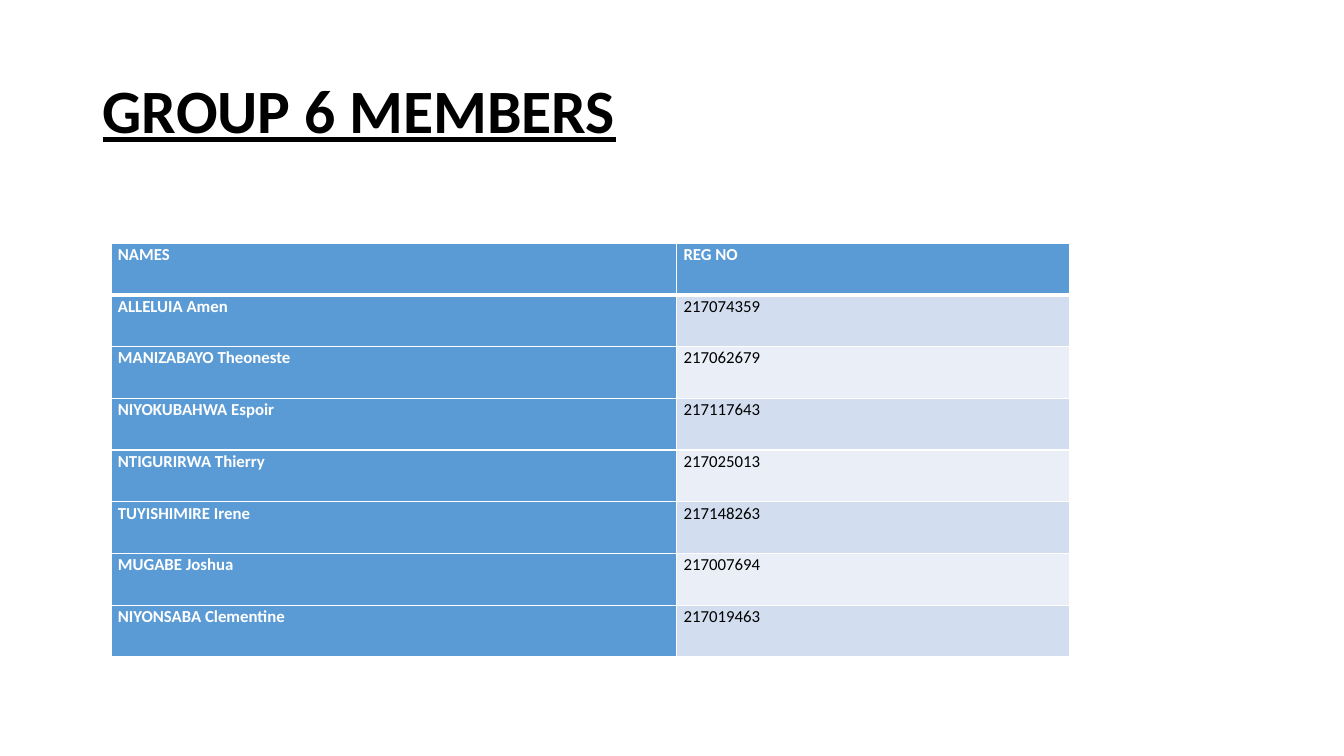
from lxml import etree
from pptx import Presentation
from pptx.dml.color import RGBColor
from pptx.enum.text import MSO_ANCHOR
from pptx.oxml.ns import qn
from pptx.util import Inches, Pt

COLORS = {
    "text": "000000",
    "white": "FFFFFF",
    "blue": "5B9BD5",
    "band_dark": "D2DEEF",
    "band_light": "EAEFF7",
}

MEMBERS = [
    ("NAMES", "REG NO"),
    ("ALLELUIA Amen", "217074359"),
    ("MANIZABAYO Theoneste", "217062679"),
    ("NIYOKUBAHWA Espoir", "217117643"),
    ("NTIGURIRWA Thierry", "217025013"),
    ("TUYISHIMIRE Irene", "217148263"),
    ("MUGABE Joshua", "217007694"),
    ("NIYONSABA Clementine", "217019463"),
]


def rgb(name):
    return RGBColor.from_string(COLORS[name])


class SlideBuilder:
    font = "Calibri"

    def __init__(self, s):
        self.s = s

    def run(self, p, text, size, color, bold=False, underline=False):
        r = p.add_run()
        r.text = text
        r.font.name = self.font
        r.font.size = Pt(size)
        r.font.bold = bold
        r.font.underline = underline
        r.font.color.rgb = rgb(color)

    def title(self, text, x, y, w, h):
        sp = self.s.shapes.add_textbox(Inches(x), Inches(y), Inches(w), Inches(h))
        tf = sp.text_frame
        tf.word_wrap = True
        tf.vertical_anchor = MSO_ANCHOR.MIDDLE
        p = tf.paragraphs[0]
        p.line_spacing = 0.9
        self.run(p, text, 44, "text", bold=True, underline=True)

    def border(self, cell, side, width):
        tc_pr = cell._tc.get_or_add_tcPr()
        ln = etree.SubElement(tc_pr, qn(f"a:ln{side}"), w=str(Pt(width)))
        fill = etree.SubElement(ln, qn("a:solidFill"))
        etree.SubElement(fill, qn("a:srgbClr"), val=COLORS["white"])

    def cell(self, cell, text, fill, color, bold, top, bottom):
        cell.margin_left = cell.margin_right = Inches(0.07)
        cell.margin_top = cell.margin_bottom = 0
        # Borders come before the fill in the cell properties
        for side, width in (("L", 1), ("R", 1), ("T", top), ("B", bottom)):
            self.border(cell, side, width)
        cell.fill.solid()
        cell.fill.fore_color.rgb = rgb(fill)
        p = cell.text_frame.paragraphs[0]
        p.line_spacing = 1.07
        self.run(p, text, 12, color, bold)

    def table(self, rows, x, y, col_widths, h):
        frame = self.s.shapes.add_table(
            len(rows), len(col_widths), Inches(x), Inches(y),
            Inches(sum(col_widths)), Inches(h))
        table = frame.table
        for col, width in zip(table.columns, col_widths):
            col.width = Inches(width)
        for i, row in enumerate(rows):
            table.rows[i].height = Inches(h / len(rows))
            band = "band_dark" if i % 2 else "band_light"
            for j, text in enumerate(row):
                heading = i == 0 or j == 0
                self.cell(table.cell(i, j), text,
                          fill="blue" if heading else band,
                          color="white" if heading else "text",
                          bold=heading,
                          top=3 if i == 1 else 1,
                          bottom=3 if i == 0 else 1)


def main():
    prs = Presentation()
    prs.slide_width, prs.slide_height = Inches(13.33), Inches(7.5)
    builder = SlideBuilder(prs.slides.add_slide(prs.slide_layouts[6]))

    # Heading
    builder.title("GROUP 6 MEMBERS", 0.92, 0.4, 11.5, 1.45)

    # Member list
    builder.table(MEMBERS, 1.1, 2.41, (5.61, 3.9), 4.11)

    prs.save("out.pptx")


if __name__ == "__main__":
    main()
